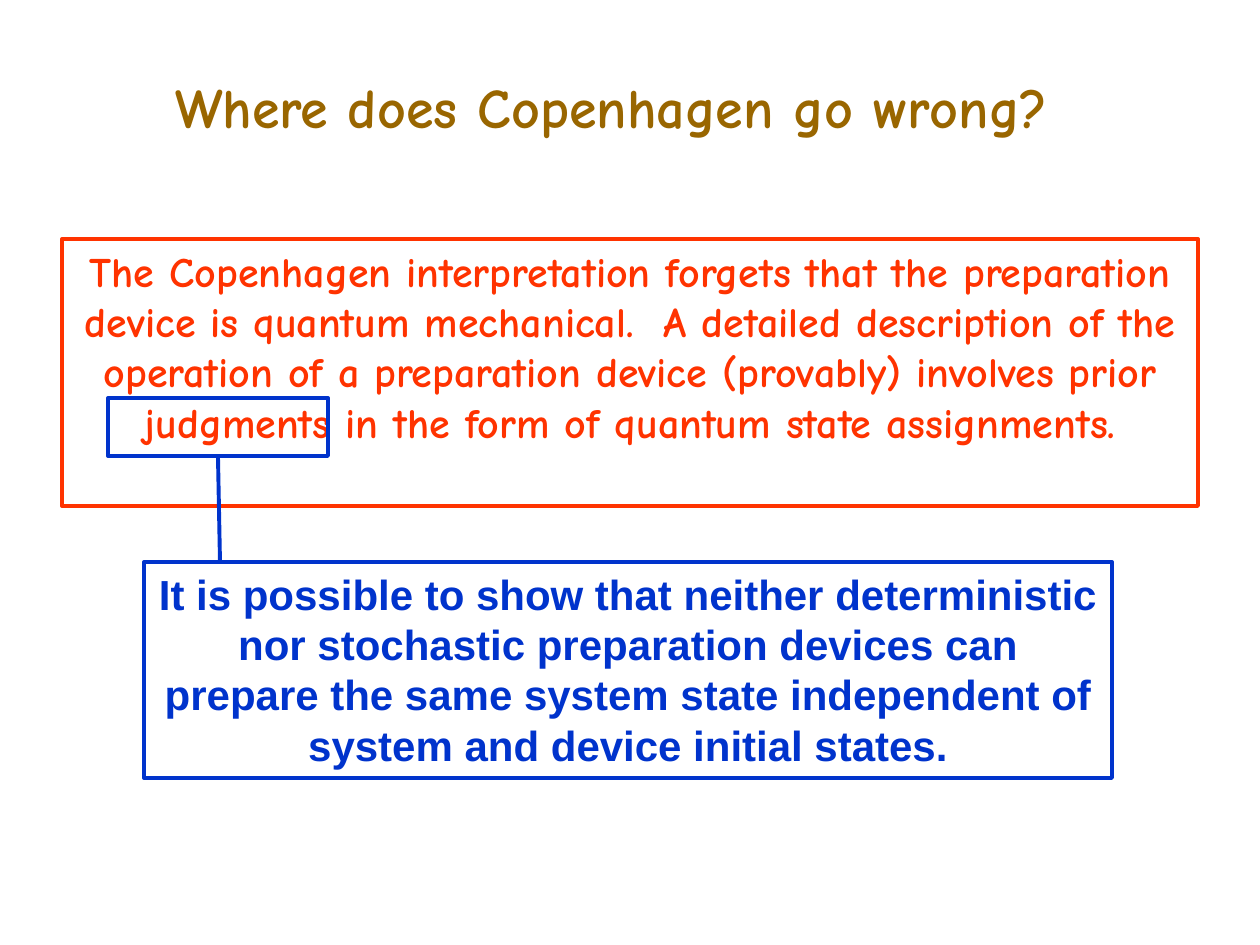
"""Build the slide on where the Copenhagen interpretation goes wrong."""
from lxml.etree import SubElement
from pptx import Presentation
from pptx.dml.color import RGBColor
from pptx.enum.shapes import MSO_CONNECTOR, MSO_SHAPE
from pptx.enum.text import MSO_ANCHOR, PP_ALIGN
from pptx.oxml.ns import qn
from pptx.util import Emu, Pt

PX = 914400 // 126
BROWN, RED, BLUE = "996600", "FF3300", "0033CC"


def paint(color_format, color):
    color_format.rgb = RGBColor.from_string(color)


def write(shape, text, font, size, color):
    frame = shape.text_frame
    frame.word_wrap = True
    frame.vertical_anchor = MSO_ANCHOR.TOP
    paragraph = frame.paragraphs[0]
    paragraph.alignment = PP_ALIGN.CENTER
    run = paragraph.add_run()
    run.text = text
    run.font.name = font
    run.font.size = Pt(size)
    run.font.bold = True
    paint(run.font.color, color)


presentation = Presentation()
presentation.slide_width = Emu(1260 * PX)
presentation.slide_height = Emu(945 * PX)
slide = presentation.slides.add_slide(presentation.slide_layouts[6])

title = slide.shapes.add_textbox(0, 66 * PX, 1224 * PX, 79 * PX)
write(title, "Where does Copenhagen go wrong?", "Comic Neue", 32, BROWN)

claim = (
    "The Copenhagen interpretation forgets that the preparation device is "
    "quantum mechanical.  A detailed description of the operation of a "
    "preparation device (provably) involves prior judgments in the form of "
    "quantum state assignments."
)
explanation = (
    "It is possible to show that neither deterministic nor stochastic "
    "preparation devices can prepare the same system state independent of "
    "system and device initial states."
)
boxes = [
    ((62, 239, 1136, 267), RED, claim, "Comic Neue"),
    ((144, 562, 968, 216), BLUE, explanation, "Arial"),
    ((108, 398, 220, 58), BLUE, "", ""),
]
for bounds, color, text, font in boxes:
    box = slide.shapes.add_shape(
        MSO_SHAPE.RECTANGLE, *[Emu(length * PX) for length in bounds]
    )
    box.shadow.inherit = False
    box.fill.background()
    paint(box.line.color, color)
    box.line.width = Pt(2.25)
    if text:
        write(box, text, font, 24, color)

connector = slide.shapes.add_connector(
    MSO_CONNECTOR.STRAIGHT, 218 * PX, 456 * PX, 220 * PX, 560 * PX
)
paint(connector.line.color, BLUE)
connector.line.width = Pt(2.25)
SubElement(connector._element.spPr, qn("a:effectLst"))

presentation.save("out.pptx")
